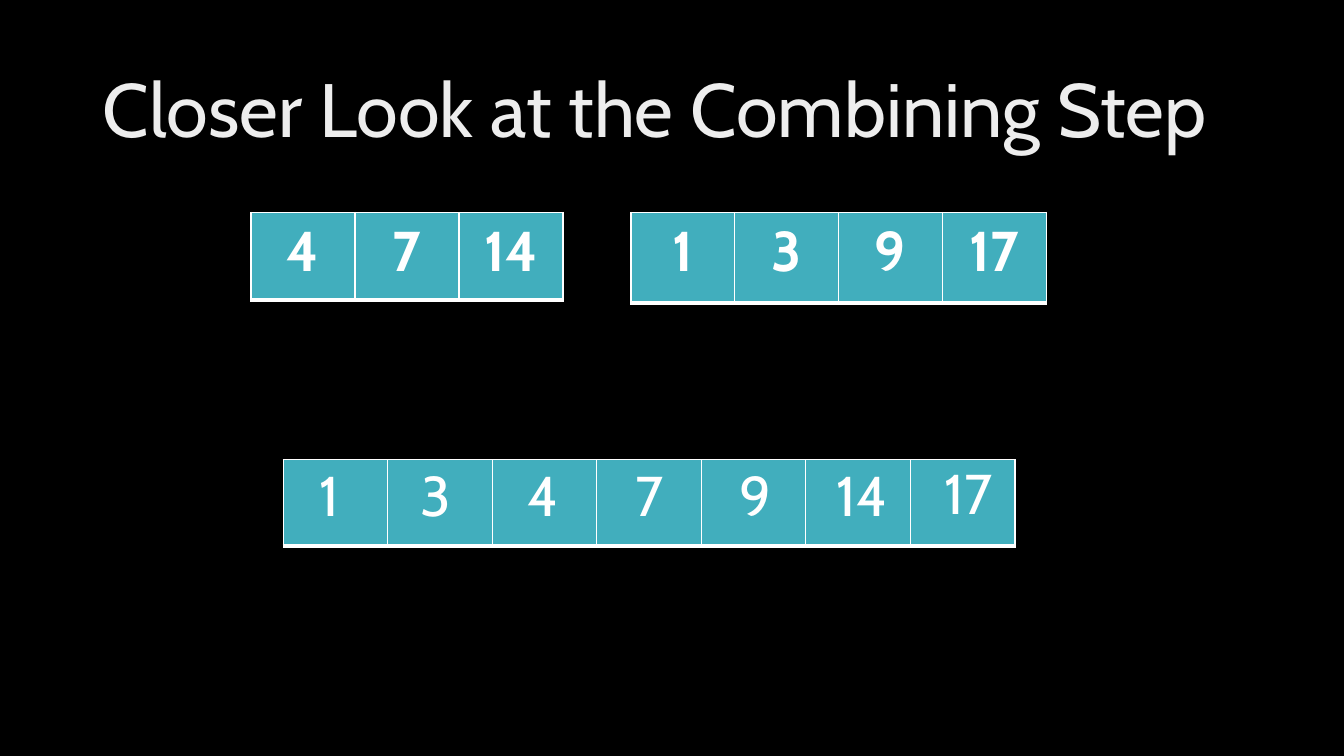
"""Build the slide on the combining step of merge sort."""
from dataclasses import dataclass

from lxml.etree import SubElement
from pptx import Presentation
from pptx.dml.color import RGBColor
from pptx.enum.text import MSO_ANCHOR, PP_ALIGN
from pptx.oxml.ns import qn
from pptx.util import Pt


@dataclass(frozen=True)
class Theme:
    font: str = "Cabin"
    back: RGBColor = RGBColor(0, 0, 0)
    title: RGBColor = RGBColor(0xED, 0xED, 0xED)
    cell: RGBColor = RGBColor(0x41, 0xAE, 0xBD)
    white: RGBColor = RGBColor(0xFF, 0xFF, 0xFF)
    title_size: Pt = Pt(54)
    number_size: Pt = Pt(40)


theme = Theme()


def set_text(tf, text, size, color, align, bold=False):
    p = tf.paragraphs[0]
    p.text = text
    p.alignment = align
    p.font.name = theme.font
    p.font.size = size
    p.font.bold = bold
    p.font.color.rgb = color
    return p


def add_array(s, left, top, col_width, height, values):
    size = Pt(col_width * len(values)), Pt(height)
    table = s.shapes.add_table(1, len(values), Pt(left), Pt(top), *size).table
    table.first_row = table.horz_banding = False
    table.rows[0].height = Pt(height)
    for col, value in enumerate(values):
        table.columns[col].width = Pt(col_width)
        cell = table.cell(0, col)
        for side, width in (("L", 1), ("R", 1), ("T", 1), ("B", 3)):
            ln = SubElement(cell._tc.get_or_add_tcPr(), qn(f"a:ln{side}"), w=str(Pt(width)))
            SubElement(SubElement(ln, qn("a:solidFill")), qn("a:srgbClr"), val=str(theme.white))
        cell.fill.solid()
        cell.fill.fore_color.rgb = theme.cell
        if value:
            set_text(cell.text_frame, value, theme.number_size, theme.white, PP_ALIGN.CENTER, True)


prs = Presentation()
prs.slide_width, prs.slide_height = Pt(960), Pt(540)
s = prs.slides.add_slide(prs.slide_layouts[5])
s.background.fill.solid()
s.background.fill.fore_color.rgb = theme.back

title = s.shapes.title
title.left, title.top, title.width, title.height = Pt(66), Pt(28.8), Pt(828), Pt(104.4)
title.text_frame.vertical_anchor = MSO_ANCHOR.MIDDLE
p = set_text(title.text_frame, "Closer Look at the Combining Step",
             theme.title_size, theme.title, PP_ALIGN.LEFT)
p.line_spacing = 0.9

add_array(s, 179.3, 151.7, 74.3, 62.6, ["4", "7", "14"])
add_array(s, 450.7, 151.7, 74.2, 64.8, ["1", "3", "9", "17"])

merged = ["1", "3", "4", "7", "9", "14", "17"]
add_array(s, 202.3, 328.3, 74.67, 61.9, [""] * len(merged))
for i, value in enumerate(merged):
    top = 324 if value == "17" else 325.4
    sp = s.shapes.add_textbox(Pt(203.8 + 76.1 * i), Pt(top), Pt(63.4), Pt(55.4))
    tf = sp.text_frame
    tf.word_wrap = True
    set_text(tf, value, theme.number_size, theme.white, PP_ALIGN.CENTER)

prs.save("out.pptx")
